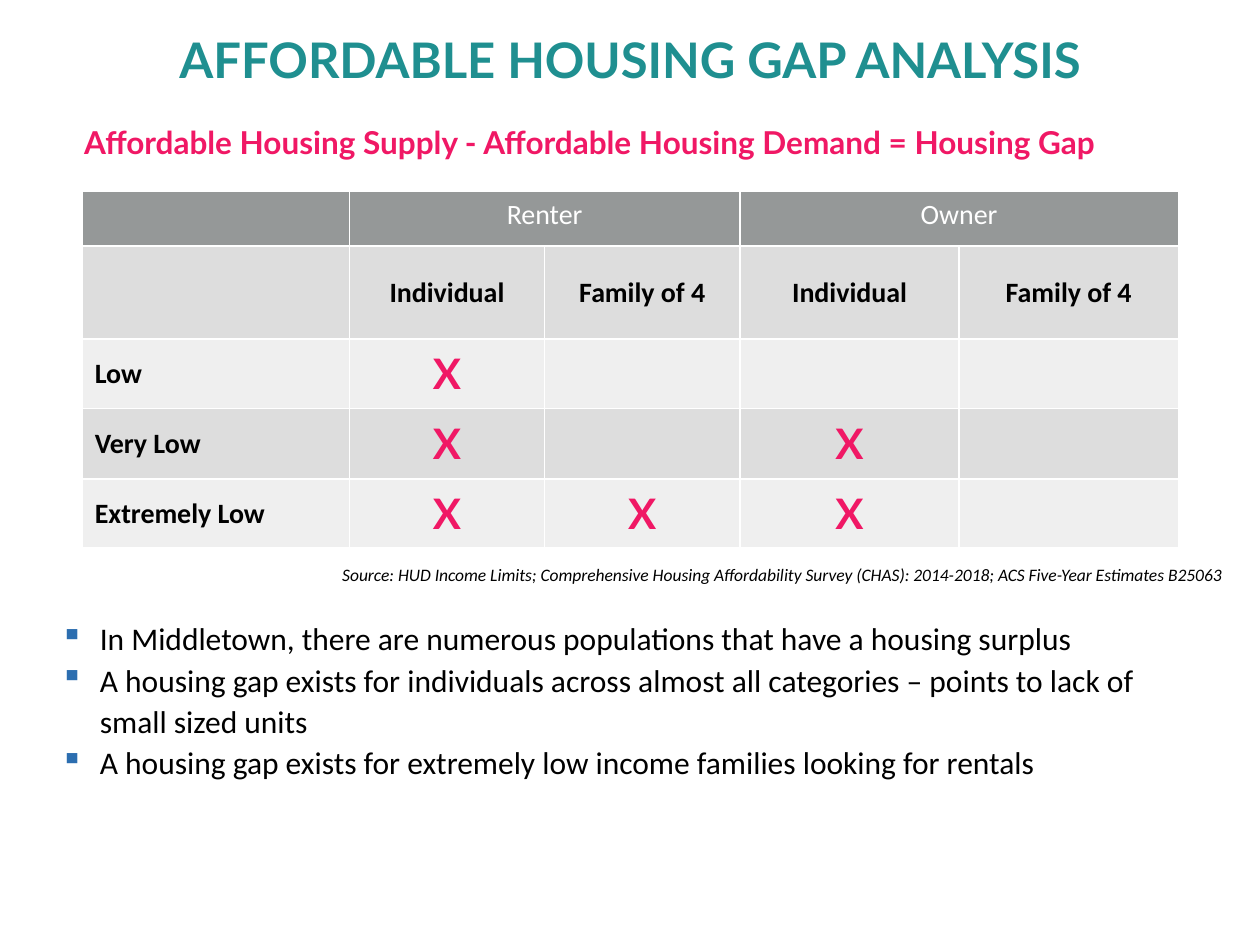
from lxml import etree
from pptx import Presentation
from pptx.dml.color import RGBColor
from pptx.enum import text
from pptx.oxml import ns
from pptx.util import Pt

COLORS = {
    "teal": "1F8F90", "pink": "F01865", "black": "000000", "white": "FFFFFF",
    "header": "959898", "dark_band": "DDDDDD", "light_band": "EFEFEF", "bullet": "2C6EB0",
}
COL_WIDTHS = [152.64, 111.6, 111.6, 125.28, 125.28]
ROW_HEIGHTS = [31, 53.28, 39.6, 40.3, 39.6]
ROWS = [
    ["", "Renter", "", "Owner", ""],
    ["", "Individual", "Family of 4", "Individual", "Family of 4"],
    ["Low", "X", "", "", ""],
    ["Very Low", "X", "", "X", ""],
    ["Extremely Low", "X", "X", "X", ""],
]
BULLETS = [
    "In Middletown, there are numerous populations that have a housing surplus",
    "A housing gap exists for individuals across almost all categories – points to lack of "
    "small sized units",
    "A housing gap exists for extremely low income families looking for rentals",
]


def rgb(name):
    return RGBColor.from_string(COLORS[name])


def style_runs(p, size, color, font="Calibri", bold=False, italic=False):
    for r in p.runs:
        f = r.font
        f.size, f.name, f.bold, f.italic = Pt(size), font, bold, italic
        f.color.rgb = rgb(color)


def add_title(s, title):
    sp = s.shapes.title
    sp.left, sp.top, sp.width, sp.height = Pt(0), Pt(13), Pt(720), Pt(46)
    tf = sp.text_frame
    tf.text = title
    tf.vertical_anchor = text.MSO_ANCHOR.MIDDLE
    p = tf.paragraphs[0]
    p.alignment, p.line_spacing = text.PP_ALIGN.CENTER, 0.9
    style_runs(p, 28, "teal", "Lato", bold=True)


def add_text(s, left, top, width, height, lines):
    """Add a wrapping text box and return its paragraphs."""
    tf = s.shapes.add_textbox(Pt(left), Pt(top), Pt(width), Pt(height)).text_frame
    tf.word_wrap = True
    tf.text = "\n".join(lines)
    return tf.paragraphs


def add_bullet(p, color, indent):
    pPr = p._p.get_or_add_pPr()
    pPr.set("marL", str(Pt(indent)))
    pPr.set("indent", str(-Pt(indent)))
    clr = etree.SubElement(pPr, ns.qn("a:buClr"))
    etree.SubElement(clr, ns.qn("a:srgbClr"), val=COLORS[color])
    etree.SubElement(pPr, ns.qn("a:buChar"), char="▪")


def add_borders(cell, color, width):
    tcPr = cell._tc.get_or_add_tcPr()
    for i, side in enumerate(["lnL", "lnR", "lnT", "lnB"]):
        ln = etree.Element(ns.qn(f"a:{side}"), w=str(Pt(width)))
        fill = etree.SubElement(ln, ns.qn("a:solidFill"))
        etree.SubElement(fill, ns.qn("a:srgbClr"), val=COLORS[color])
        tcPr.insert(i, ln)


def format_cell(cell, row, col):
    if row == 0:
        band = "header"
    else:
        band = "dark_band" if row % 2 else "light_band"
        cell.vertical_anchor = text.MSO_ANCHOR.MIDDLE
    cell.fill.solid()
    cell.fill.fore_color.rgb = rgb(band)
    add_borders(cell, "white", 1)
    cell.text = ROWS[row][col]
    p = cell.text_frame.paragraphs[0]
    if col:
        p.alignment = text.PP_ALIGN.CENTER
    if cell.text == "X":
        style_runs(p, 24, "pink", "Lato", bold=True)
    else:
        style_runs(p, 16, "black" if row else "white", bold=row > 0)


def add_gap_table(s, left, top):
    frame = s.shapes.add_table(len(ROWS), len(COL_WIDTHS), Pt(left), Pt(top),
                               Pt(sum(COL_WIDTHS)), Pt(sum(ROW_HEIGHTS)))
    table = frame.table
    for column, width in zip(table.columns, COL_WIDTHS):
        column.width = Pt(width)
    for i, height in enumerate(ROW_HEIGHTS):
        table.rows[i].height = Pt(height)
        for j in range(len(COL_WIDTHS)):
            format_cell(table.cell(i, j), i, j)
    for col in (1, 3):
        table.cell(0, col).merge(table.cell(0, col + 1))


def main():
    prs = Presentation()
    prs.slide_width, prs.slide_height = Pt(720), Pt(540)
    s = prs.slides.add_slide(prs.slide_layouts[5])
    add_title(s, "AFFORDABLE HOUSING GAP ANALYSIS")
    add_gap_table(s, 47, 109.5)

    formula = add_text(s, 41, 67, 636.5, 29, [
        "Affordable Housing Supply - Affordable Housing Demand = Housing Gap"])
    style_runs(formula[0], 18, "pink", "Lato", bold=True)

    source = add_text(s, 188.5, 318.5, 587.5, 19.5, [
        "Source: HUD Income Limits; Comprehensive Housing Affordability Survey (CHAS): "
        "2014-2018; ACS Five-Year Estimates B25063"])
    style_runs(source[0], 10, "black", italic=True)

    for p in add_text(s, 27.5, 348.5, 651, 101.5, BULLETS):
        add_bullet(p, "bullet", 22.5)
        p.line_spacing = 1.09
        style_runs(p, 18, "black")
    prs.save("out.pptx")


if __name__ == "__main__":
    main()
